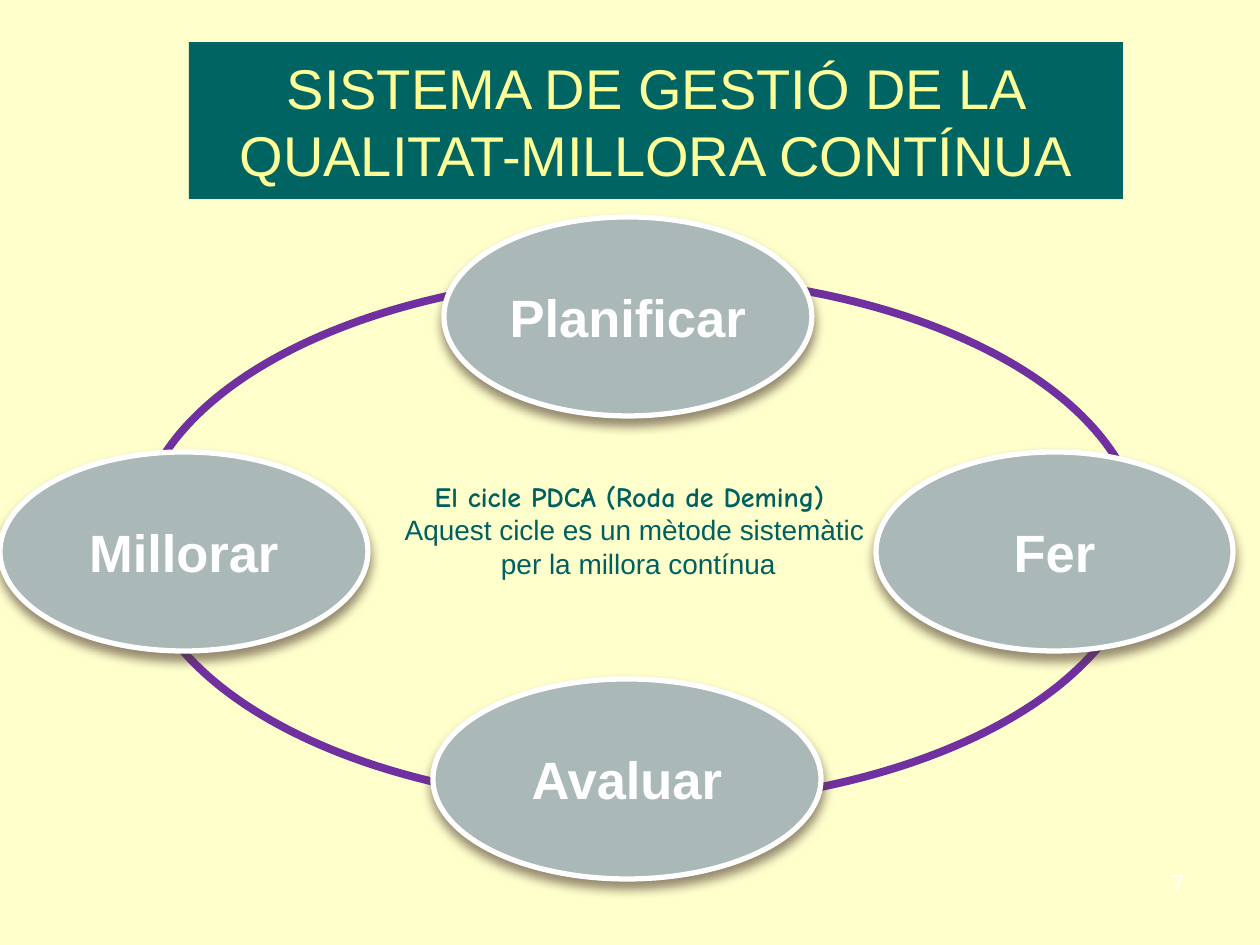
from dataclasses import dataclass

from lxml import etree
from pptx import Presentation
from pptx.dml.color import RGBColor
from pptx.enum.shapes import MSO_SHAPE
from pptx.enum.text import MSO_ANCHOR, PP_ALIGN
from pptx.oxml.ns import qn
from pptx.util import Pt

RECT = MSO_SHAPE.RECTANGLE
OVAL = MSO_SHAPE.OVAL
MIDDLE = MSO_ANCHOR.MIDDLE
TOP = MSO_ANCHOR.TOP
CENTER = PP_ALIGN.CENTER
RIGHT = PP_ALIGN.RIGHT
SCALE = 914400 / 126


@dataclass(frozen=True)
class Theme:
    paper: str = "FFFFCC"
    band: str = "006462"
    title: str = "FFFF99"
    ring: str = "7030A0"
    stage: str = "AAB8B7"
    white: str = "FFFFFF"
    shade: str = "4E3B30"
    note: str = "006060"
    font: str = "Arial"
    hand: str = "Comic Neue"
    title_size: int = 32
    stage_size: int = 30
    note_size: int = 16
    page_size: int = 14


THEME = Theme()

STAGES = [
    ("Avaluar", (433, 679, 388, 200)),
    ("Fer", (876, 452, 357, 199)),
    ("Planificar", (444, 217, 368, 199)),
    ("Millorar", (0, 452, 368, 199)),
]

NOTES = [
    ("El cicle PDCA (Roda de Deming) ", THEME.hand, True),
    ("Aquest cicle es un mètode sistemàtic", THEME.font, False),
    (" per la millora contínua", THEME.font, False),
]


def emu(px):
    return round(px * SCALE)


def place(box):
    return [emu(px) for px in box]


def write(para, text, *, size, color, font=THEME.font, bold=False, align=CENTER):
    para.alignment = align
    run = para.add_run()
    run.text = text
    run.font.name = font
    run.font.size = Pt(size)
    run.font.bold = bold
    run.font.color.rgb = RGBColor.from_string(color)


def add_form(slide, kind, box, fill=None, line=None, width=0):
    shape = slide.shapes.add_shape(kind, *place(box))
    shape.shadow.inherit = False
    if fill:
        shape.fill.solid()
        shape.fill.fore_color.rgb = RGBColor.from_string(fill)
    else:
        shape.fill.background()
    if line:
        shape.line.color.rgb = RGBColor.from_string(line)
        shape.line.width = Pt(width)
    else:
        shape.line.fill.background()
    shape.text_frame.vertical_anchor = MIDDLE
    return shape


def cast_shade(shape):
    effects = shape.element.spPr.find(qn("a:effectLst"))
    shade = etree.SubElement(
        effects, qn("a:outerShdw"), blurRad=str(Pt(6)), dist=str(Pt(4)),
        dir="5400000", rotWithShape="0")
    color = etree.SubElement(shade, qn("a:srgbClr"), val=THEME.shade)
    etree.SubElement(color, qn("a:alpha"), val="60000")


def add_title(slide, text, box):
    frame = add_form(slide, RECT, box, THEME.band).text_frame
    frame.word_wrap = True
    write(frame.paragraphs[0], text, size=THEME.title_size, color=THEME.title)


def add_stage(slide, text, box):
    shape = add_form(slide, OVAL, box, THEME.stage, THEME.white, 3)
    cast_shade(shape)
    frame = shape.text_frame
    frame.word_wrap = False
    write(frame.paragraphs[0], text, size=THEME.stage_size, color=THEME.white, bold=True)


def add_frame(slide, box, anchor):
    frame = slide.shapes.add_textbox(*place(box)).text_frame
    frame.word_wrap = True
    frame.vertical_anchor = anchor
    return frame


def add_notes(slide, notes, box):
    frame = add_frame(slide, box, TOP)
    for row, (text, font, bold) in enumerate(notes):
        para = frame.add_paragraph() if row else frame.paragraphs[0]
        write(para, text, size=THEME.note_size, color=THEME.note, font=font, bold=bold)


def add_page(slide, text, box):
    frame = add_frame(slide, box, MIDDLE)
    write(frame.paragraphs[0], text, size=THEME.page_size, color=THEME.white, align=RIGHT)


def main():
    deck = Presentation()
    deck.slide_width, deck.slide_height = emu(1260), emu(945)
    slide = deck.slides.add_slide(deck.slide_layouts[6])
    back = slide.background.fill
    back.solid()
    back.fore_color.rgb = RGBColor.from_string(THEME.paper)
    add_title(slide, "SISTEMA DE GESTIÓ DE LA QUALITAT-MILLORA CONTÍNUA", (189, 42, 934, 157))
    add_form(slide, OVAL, (137, 276, 1004, 529), line=THEME.ring, width=4.5)
    for text, box in STAGES:
        add_stage(slide, text, box)
    add_notes(slide, NOTES, (354, 473, 561, 115))
    add_page(slide, "7", (903, 860, 294, 46))
    deck.save("out.pptx")


if __name__ == "__main__":
    main()
